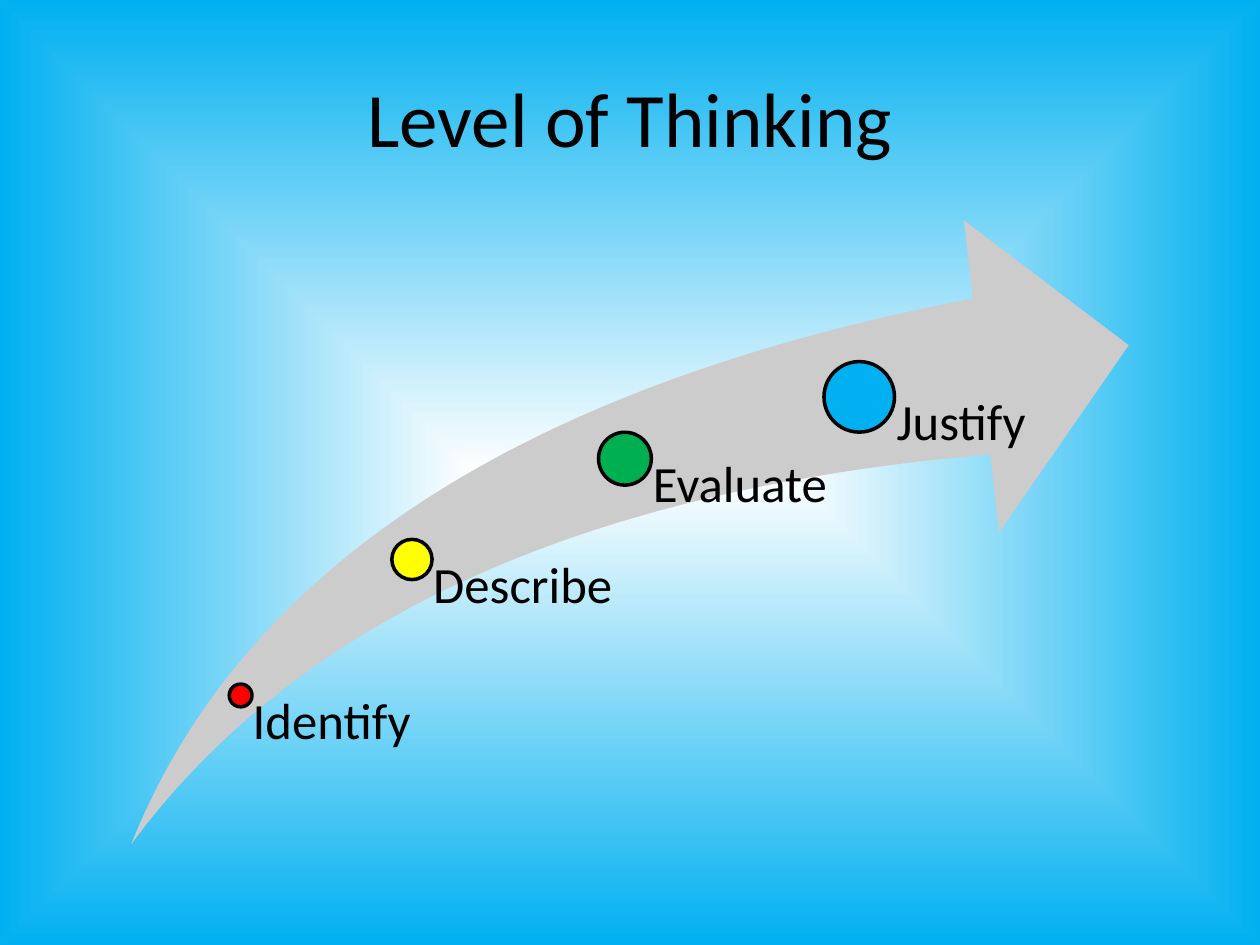
from dataclasses import dataclass

import lxml.etree
import pptx
import pptx.dml.color
import pptx.enum.shapes
import pptx.enum.text
import pptx.oxml.ns
import pptx.util

Pt = pptx.util.Pt
Rgb = pptx.dml.color.RGBColor.from_string
Shape = pptx.enum.shapes.MSO_SHAPE
Align = pptx.enum.text.PP_ALIGN
Anchor = pptx.enum.text.MSO_ANCHOR
qn = pptx.oxml.ns.qn


@dataclass(frozen=True)
class Theme:
    font: str = "Calibri"
    ink: str = "000000"
    core: str = "FFFFFF"
    edge: str = "00B0F0"
    arrow: str = "CCCCCC"
    title: float = 44
    label: float = 29
    line: float = 2


@dataclass(frozen=True)
class Level:
    """A dot on the arrow, by its centre, with the label beside it."""
    name: str
    x: float
    y: float
    size: float
    width: float
    fill: str


THEME = Theme()
FLOOR = 482.4  # bottom edge of the arrow and of every label
INSET = 0.53   # label indent as a share of the dot size
LEVELS = [
    Level("Identify", 137.5, 397.4, 13, 97.2, "FF0000"),
    Level("Describe", 235.4, 319.7, 23, 119.5, "FFFF00"),
    Level("Evaluate", 357.1, 262.1, 30.2, 119.5, "00B050"),
    Level("Justify", 491, 226.8, 40.3, 119.5, "00B0F0"),
]


def paint(slide) -> None:
    """Fill the background with a gradient spreading from the centre."""
    fill = slide.background.fill
    fill.gradient()
    for stop, color in zip(fill.gradient_stops, (THEME.core, THEME.edge)):
        stop.color.rgb = Rgb(color)
    grad = slide.element.find(".//" + qn("a:gradFill"))
    grad.remove(grad.find(qn("a:lin")))
    route = lxml.etree.SubElement(grad, qn("a:path"), path="shape")
    sides = dict.fromkeys("ltrb", "50000")
    lxml.etree.SubElement(route, qn("a:fillToRect"), **sides)


def shape(slide, kind, left: float, top: float, width: float, height: float, fill: str):
    item = slide.shapes.add_shape(kind, Pt(left), Pt(top), Pt(width), Pt(height))
    item.shadow.inherit = False
    item.fill.solid()
    item.fill.fore_color.rgb = Rgb(fill)
    item.line.fill.background()
    return item


def text(slide, words: str, left: float, top: float, width: float, height: float, size: float):
    """Add a text box without margins and return its frame."""
    frame = slide.shapes.add_textbox(Pt(left), Pt(top), Pt(width), Pt(height)).text_frame
    frame.word_wrap = True
    frame.margin_left = frame.margin_right = 0
    frame.margin_top = frame.margin_bottom = 0
    run = frame.paragraphs[0].add_run()
    run.text = words
    run.font.name = THEME.font
    run.font.size = Pt(size)
    run.font.color.rgb = Rgb(THEME.ink)
    return frame


def mark(slide, level: Level) -> None:
    """Draw one dot and its label."""
    half = level.size / 2
    dot = shape(slide, Shape.OVAL, level.x - half, level.y - half,
                level.size, level.size, level.fill)
    dot.line.color.rgb = Rgb(THEME.ink)
    dot.line.width = Pt(THEME.line)
    frame = text(slide, level.name, level.x, level.y,
                 level.width, FLOOR - level.y, THEME.label)
    frame.margin_left = Pt(level.size * INSET)
    frame.paragraphs[0].line_spacing = 0.9


def main() -> None:
    deck = pptx.Presentation()
    deck.slide_width, deck.slide_height = Pt(720), Pt(540)
    slide = deck.slides.add_slide(deck.slide_layouts[6])
    paint(slide)

    # Title
    head = text(slide, "Level of Thinking", 36, 21.6, 648, 90, THEME.title)
    head.vertical_anchor = Anchor.MIDDLE
    head.paragraphs[0].alignment = Align.CENTER

    # Rising arrow
    arrow = shape(slide, Shape.SWOOSH_ARROW, 75, 126, 570, FLOOR - 126, THEME.arrow)
    arrow.adjustments[0] = arrow.adjustments[1] = 0.25

    # Levels along the arrow
    for level in LEVELS:
        mark(slide, level)

    deck.save("out.pptx")


if __name__ == "__main__":
    main()
